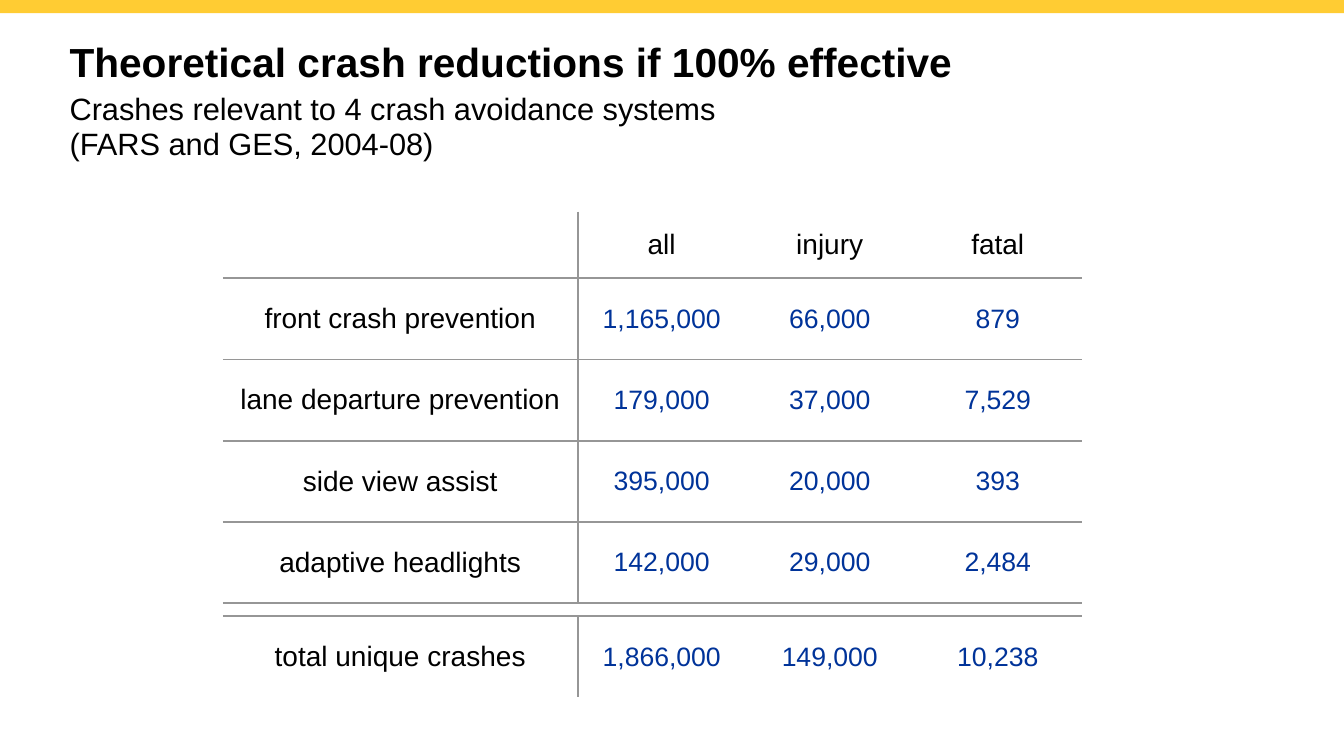
import pptx
import pptx.util
import pptx.dml.color
import pptx.enum.shapes
import pptx.enum.text
import pptx.oxml.ns
from lxml import etree

Inches, Pt = pptx.util.Inches, pptx.util.Pt
RGBColor = pptx.dml.color.RGBColor
BLACK = RGBColor(0x00, 0x00, 0x00)
BLUE = RGBColor(0x00, 0x33, 0x99)
GREY = RGBColor(0x96, 0x96, 0x96)
YELLOW = RGBColor(0xFF, 0xCC, 0x33)
NO_STYLE = "{2D5ABB26-0587-4C30-8999-92F81FD0307C}"

GAP_ROW = 5
CRASHES = [
    ("", "all", "injury", "fatal"),
    ("front crash prevention", "1,165,000", "66,000", "879"),
    ("lane departure prevention", "179,000", "37,000", "7,529"),
    ("side view assist", "395,000", "20,000", "393"),
    ("adaptive headlights", "142,000", "29,000", "2,484"),
    ("", "", "", ""),
    ("total unique crashes", "1,866,000", "149,000", "10,238"),
]


def add_child(parent, tag, **attributes):
    """Append a DrawingML element to parent and return it."""
    return etree.SubElement(parent, pptx.oxml.ns.qn(tag), attributes)


def style_paragraph(paragraph, size, color, align, bold=False):
    """Set the alignment and font of one paragraph."""
    paragraph.alignment = align
    paragraph.font.name = "Arial"
    paragraph.font.size = Pt(size)
    paragraph.font.bold = bold
    paragraph.font.color.rgb = color


def fill_heading(heading, lines, box, size, leading, bold=False):
    """Place a heading in its box and write its lines."""
    heading.left, heading.top, heading.width, heading.height = map(Inches, box)
    frame = heading.text_frame
    frame.word_wrap = True
    frame.auto_size = pptx.enum.text.MSO_AUTO_SIZE.NONE
    frame.vertical_anchor = pptx.enum.text.MSO_ANCHOR.TOP
    frame.margin_left = frame.margin_right = 0
    frame.margin_top = frame.margin_bottom = 0
    frame.text = "\n".join(lines)
    for paragraph in frame.paragraphs:
        paragraph.line_spacing = Pt(leading)
        style_paragraph(paragraph, size, BLACK, pptx.enum.text.PP_ALIGN.LEFT, bold)


def add_top_band(slide, left, top, width, height):
    """Draw the coloured band along the top edge."""
    band = slide.shapes.add_shape(
        pptx.enum.shapes.MSO_SHAPE.RECTANGLE, *map(Inches, (left, top, width, height)))
    band.shadow.inherit = False
    band.fill.solid()
    band.fill.fore_color.rgb = YELLOW
    band.line.fill.background()


def rule_cell(cell, row, column):
    """Draw the grid rules that touch one cell."""
    properties = cell._tc.get_or_add_tcPr()
    ruled = {
        "a:lnL": column == 1 and row != GAP_ROW,
        "a:lnR": column == 0 and row != GAP_ROW,
        "a:lnT": row > 0,
        "a:lnB": row < len(CRASHES) - 1,
    }
    for side, shown in ruled.items():
        rule = add_child(properties, side, w=str(Pt(1.5)))
        if shown:
            solid = add_child(rule, "a:solidFill")
            add_child(solid, "a:srgbClr", val=str(GREY))
        else:
            add_child(rule, "a:noFill")


def fill_cell(cell, text, row, column):
    """Write and format one table cell."""
    rule_cell(cell, row, column)
    cell.fill.background()
    cell.vertical_anchor = pptx.enum.text.MSO_ANCHOR.MIDDLE
    cell.text = text
    paragraph = cell.text_frame.paragraphs[0]
    if row == GAP_ROW:
        cell.margin_top = cell.margin_bottom = 0
        add_child(paragraph._p, "a:endParaRPr", sz="400")
        return
    is_label = row == 0 or column == 0
    size, color = (20, BLACK) if is_label else (19, BLUE)
    style_paragraph(paragraph, size, color, pptx.enum.text.PP_ALIGN.CENTER)


def add_crash_table(slide, left, top, width, height):
    """Add the table of crash counts by system and severity."""
    label_width, header_height, gap_height = 3.52, 0.66, 0.13
    table = slide.shapes.add_table(
        len(CRASHES), len(CRASHES[0]), *map(Inches, (left, top, width, height))).table
    table.first_row = table.horz_banding = False
    table._tbl.tblPr.find(pptx.oxml.ns.qn("a:tableStyleId")).text = NO_STYLE
    count_width = (width - label_width) / (len(CRASHES[0]) - 1)
    row_height = (height - header_height - gap_height) / (len(CRASHES) - 2)
    special_heights = {0: header_height, GAP_ROW: gap_height}
    for column, table_column in enumerate(table.columns):
        table_column.width = Inches(count_width if column else label_width)
    for row, counts in enumerate(CRASHES):
        table.rows[row].height = Inches(special_heights.get(row, row_height))
        for column, text in enumerate(counts):
            fill_cell(table.cell(row, column), text, row, column)
    table.cell(GAP_ROW, 0).merge(table.cell(GAP_ROW, len(CRASHES[0]) - 1))


def build_crash_slide(presentation):
    """Add the slide with its band, headings and table."""
    slide = presentation.slides.add_slide(presentation.slide_layouts[5])
    add_top_band(slide, 0, 0, 13.33, 0.13)
    fill_heading(slide.shapes.title, ["Theoretical crash reductions if 100% effective"],
                 (0.69, 0.42, 12.29, 0.43), 29, 31, bold=True)
    subtitle = slide.shapes.add_textbox(0, 0, 0, 0)
    fill_heading(subtitle,
                 ["Crashes relevant to 4 crash avoidance systems", "(FARS and GES, 2004-08)"],
                 (0.69, 0.91, 12.29, 0.7), 22, 25)
    add_crash_table(slide, 2.21, 2.1, 8.52, 4.82)


def main():
    """Build and save the presentation."""
    presentation = pptx.Presentation()
    presentation.slide_width = Inches(13.33)
    presentation.slide_height = Inches(7.5)
    build_crash_slide(presentation)
    presentation.save("out.pptx")


if __name__ == "__main__":
    main()
